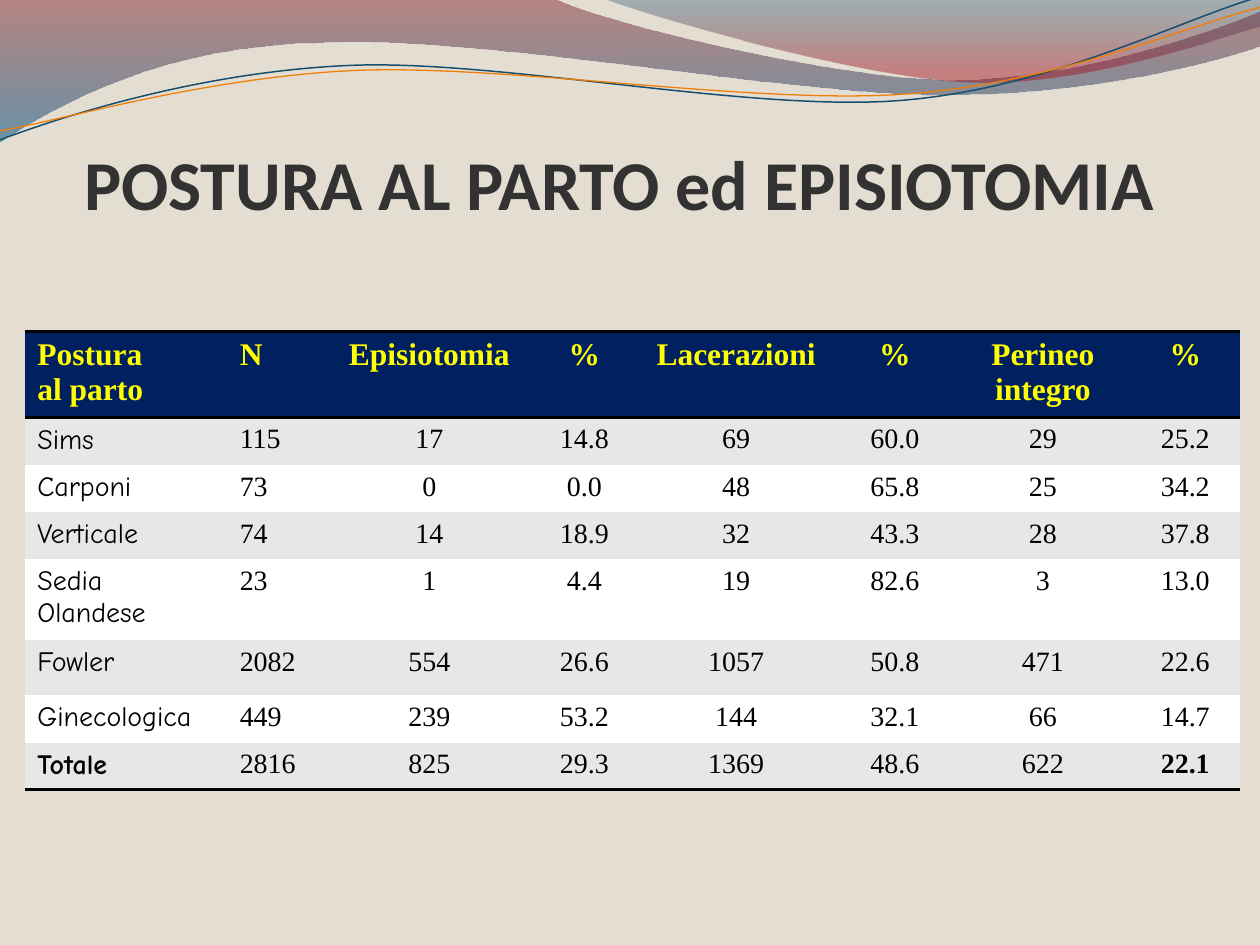
from lxml.etree import SubElement
from pptx import Presentation
from pptx.dml.color import RGBColor
from pptx.enum.text import MSO_ANCHOR, PP_ALIGN
from pptx.oxml.ns import qn
from pptx.util import Cm, Pt

NO_STYLE = "{2D5ABB26-0587-4C30-8999-92F81FD0307C}"
SERIF, HAND = "Times New Roman", "Comic Neue"

RED_WAVE = [
    [(0, -0.03)], [(11.18, -0.03)],
    [(12.09, 0.43), (16.87, 1.6), (19.25, 1.6)],
    [(21.67, 1.6), (24.33, 0.66), (25.4, 0.23)],
    [(25.43, 0.91)],
    [(24.97, 1.12), (22.1, 1.93), (18.95, 1.91)],
    [(15.8, 1.91), (9.7, 0.71), (6.53, 0.86)],
    [(3.28, 0.89), (1.17, 2.11), (-0.03, 2.87)],
    [(0, -0.03)],
]
BLUE_WAVE = [
    [(12.17, -0.03)],
    [(12.93, 0.28), (17.32, 1.57), (19.53, 1.65)],
    [(21.74, 1.75), (24.41, 0.81), (25.4, 0.53)],
    [(25.4, 0)], [(12.17, -0.03)],
]
BLUE_LINE = [
    [(0, 2.82)],
    [(1.22, 2.36), (4.01, 1.45), (7.04, 1.32)],
    [(10.03, 1.19), (15.06, 2.26), (18.11, 2.03)],
    [(21.16, 1.8), (23.83, 0.38), (25.35, -0.05)],
]
ORANGE_LINE = [
    [(0, 2.64)],
    [(1.19, 2.44), (4.17, 1.55), (7.19, 1.42)],
    [(10.24, 1.3), (15.16, 2.11), (18.21, 1.9)],
    [(21.23, 1.7), (23.9, 0.53), (25.4, 0.15)],
]

COLUMN_WIDTHS = [4.08, 2.03, 4.09, 2.16, 3.96, 2.44, 3.53, 2.21]
ROW_HEIGHTS = [1.74, 0.95, 0.95, 0.95, 1.63, 1.12, 0.95, 0.95]
ROWS = [
    ["Postura\nal parto", "N", "Episiotomia", "%", "Lacerazioni", "%", "Perineo integro", "%"],
    ["Sims", "115", "17", "14.8", "69", "60.0", "29", "25.2"],
    ["Carponi", "73", "0", "0.0", "48", "65.8", "25", "34.2"],
    ["Verticale", "74", "14", "18.9", "32", "43.3", "28", "37.8"],
    ["Sedia Olandese", "23", "1", "4.4", "19", "82.6", "3", "13.0"],
    ["Fowler", "2082", "554", "26.6", "1057", "50.8", "471", "22.6"],
    ["Ginecologica", "449", "239", "53.2", "144", "32.1", "66", "14.7"],
    ["Totale", "2816", "825", "29.3", "1369", "48.6", "622", "22.1"],
]


def color(value):
    """Return the colour for a hex string."""
    return RGBColor.from_string(value)


def bend_segments(shape, segments):
    """Turn each run of three straight steps into one cubic curve."""
    steps = iter(list(shape._element.iter(qn("a:lnTo"))))
    for segment in segments:
        group = [next(steps) for _ in segment]
        if len(group) == 3:
            curve = SubElement(group[0].getparent(), qn("a:cubicBezTo"))
            group[0].addprevious(curve)
            for step in group:
                curve.append(step[0])
                step.getparent().remove(step)


def add_outline(slide, left, top, segments, close):
    """Draw straight and curved segments from the given corner."""
    start, *vertices = [(Cm(x), Cm(y)) for segment in segments for x, y in segment]
    builder = slide.shapes.build_freeform(*start)
    builder.add_line_segments(vertices, close=close)
    shape = builder.convert_to_shape(Cm(left), Cm(top))
    bend_segments(shape, segments[1:])
    shape.shadow.inherit = False
    return shape


def add_wave(slide, left, top, segments, stops):
    """Add a filled wave with a see-through vertical gradient."""
    shape = add_outline(slide, left, top, segments, True)
    shape.line.fill.background()
    shape.fill.gradient()
    shape.fill.gradient_angle = 270
    for stop, (position, value, _) in zip(shape.fill.gradient_stops, stops):
        stop.position = position
        stop.color.rgb = color(value)
    for element, (_, _, opacity) in zip(shape._element.spPr.iter(qn("a:srgbClr")), stops):
        SubElement(element, qn("a:alpha")).set("val", str(opacity * 1000))


def add_wavy_line(slide, left, top, segments, value, width):
    """Add a thin open curve."""
    shape = add_outline(slide, left, top, segments, False)
    shape.fill.background()
    shape.line.color.rgb = color(value)
    shape.line.width = Pt(width)


def add_header(slide, left, top):
    """Place the decorative waves and lines."""
    add_wave(slide, left, top, RED_WAVE, [(0, "7E1621", 45), (1, "005689", 55)])
    add_wave(slide, left, top, BLUE_WAVE, [(0, "094467", 30), (0.8, "A10F1F", 45)])
    add_wavy_line(slide, left, top, BLUE_LINE, "184E6D", 0.85)
    add_wavy_line(slide, left, top, ORANGE_LINE, "F07F09", 0.75)


def add_title(slide, left, top, width, height):
    """Place and format the title placeholder in front of the header."""
    title = slide.shapes.title
    slide.shapes._spTree.append(title._element)
    title.left, title.top, title.width, title.height = map(Cm, (left, top, width, height))
    frame = title.text_frame
    frame.margin_left = frame.margin_right = frame.margin_bottom = 0
    frame.margin_top = Cm(0.13)
    frame.vertical_anchor = MSO_ANCHOR.BOTTOM
    frame.text = "POSTURA AL PARTO ed EPISIOTOMIA "
    paragraph = frame.paragraphs[0]
    paragraph.alignment = PP_ALIGN.CENTER
    font = paragraph.font
    font.name, font.size, font.bold = "Calibri", Pt(40), True
    font.color.rgb = color("323232")


def add_border(cell, side):
    """Add a black rule on one side of a cell."""
    line = SubElement(cell._tc.get_or_add_tcPr(), qn(f"a:ln{side}"), w=str(Pt(2)))
    fill = SubElement(line, qn("a:solidFill"))
    SubElement(fill, qn("a:srgbClr"), val="000000")


def format_cell(cell, row, column):
    """Set the rules, fill and font of a cell by its place."""
    header, last = row == 0, row == len(ROWS) - 1
    for side in "TB" if header else "B" if last else "":
        add_border(cell, side)
    cell.fill.solid()
    cell.fill.fore_color.rgb = color("002060" if header else "E7E7E7" if row % 2 else "FFFFFF")
    for paragraph in cell.text_frame.paragraphs:
        paragraph.alignment = PP_ALIGN.CENTER if column > 1 else PP_ALIGN.LEFT
        font = paragraph.font
        font.name = HAND if column == 0 and not header else SERIF
        font.size = Pt(18 if header else 16)
        font.bold = header or (last and column in (0, len(COLUMN_WIDTHS) - 1))
        font.color.rgb = color("FFFF00" if header else "000000")


def add_posture_table(slide, left, top):
    """Place the table of outcomes by posture."""
    frame = slide.shapes.add_table(len(ROWS), len(COLUMN_WIDTHS), Cm(left), Cm(top),
                                   Cm(sum(COLUMN_WIDTHS)), Cm(sum(ROW_HEIGHTS)))
    table = frame.table
    table._tbl.tblPr.find(qn("a:tableStyleId")).text = NO_STYLE
    for column, width in zip(table.columns, COLUMN_WIDTHS):
        column.width = Cm(width)
    for row, height in zip(table.rows, ROW_HEIGHTS):
        row.height = Cm(height)
    for row, texts in enumerate(ROWS):
        for column, text in enumerate(texts):
            cell = table.cell(row, column)
            cell.text = text
            format_cell(cell, row, column)


def main():
    """Build and save the presentation."""
    presentation = Presentation()
    presentation.slide_width, presentation.slide_height = Cm(25.4), Cm(19.05)
    slide = presentation.slides.add_slide(presentation.slide_layouts[5])
    slide.background.fill.solid()
    slide.background.fill.fore_color.rgb = color("E3DED1")
    add_header(slide, 0, 0)
    add_posture_table(slide, 0.5, 6.68)
    add_title(slide, 0.79, 2.13, 23.7, 2.39)
    presentation.save("out.pptx")


if __name__ == "__main__":
    main()
